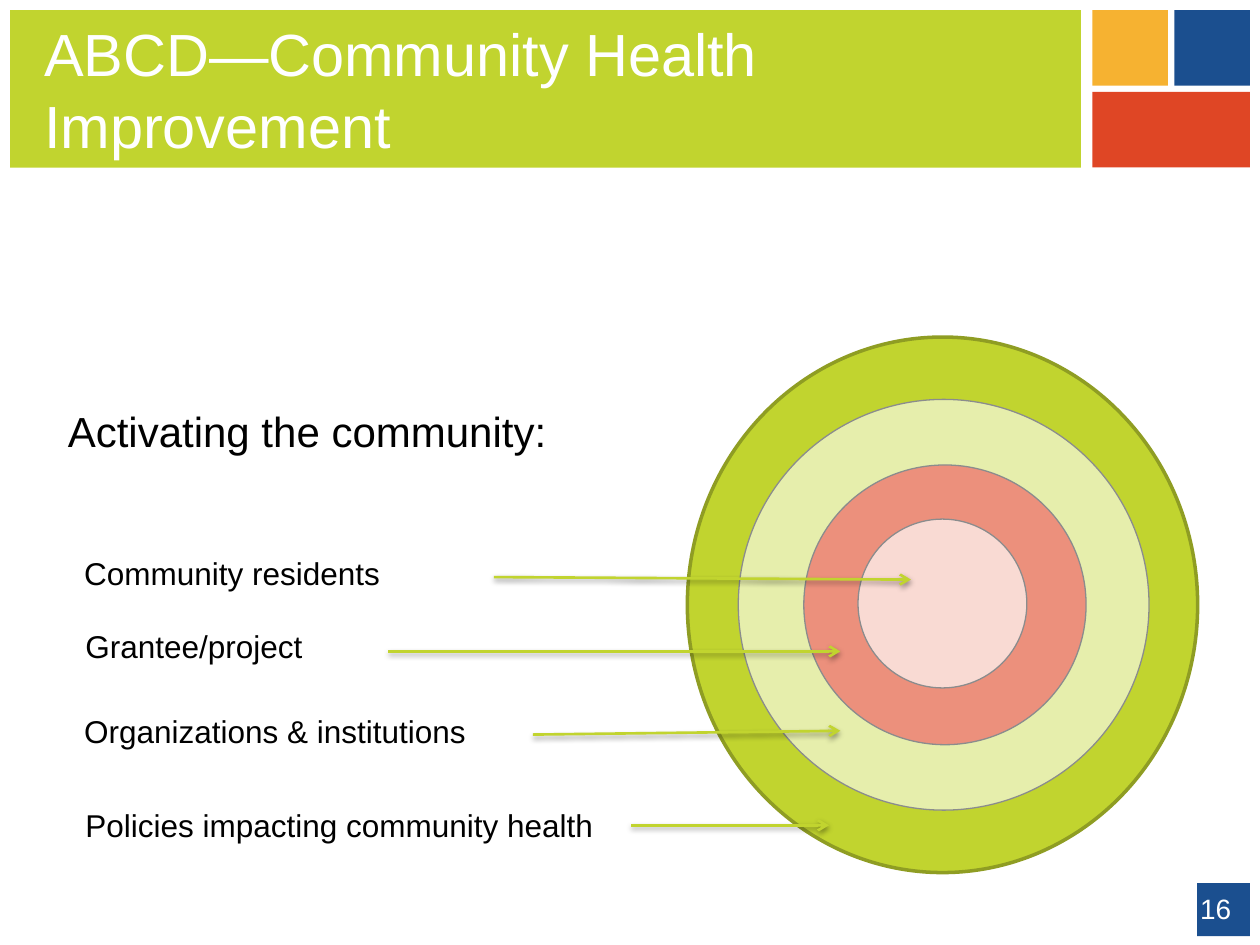
from lxml.etree import SubElement
from pptx import Presentation
from pptx.dml.color import RGBColor
from pptx.enum.shapes import MSO_CONNECTOR, MSO_SHAPE
from pptx.enum.text import MSO_ANCHOR, MSO_AUTO_SIZE, PP_ALIGN
from pptx.oxml.ns import qn
from pptx.util import Inches, Pt

FONT = "Arial"
LIME, BLUE, AMBER, RED = "C1D42F", "1B4F8F", "F6B231", "DF4625"
WHITE, BLACK, GREY = "FFFFFF", "000000", "8B8C8D"

# left, top, width, height, fill
BLOCKS = [
    (0.08, 0.08, 8.5, 1.25, LIME),
    (9.5, 7.01, 0.42, 0.42, BLUE),
    (8.67, 0.08, 0.6, 0.6, AMBER),
    (8.67, 0.73, 1.25, 0.6, RED),
    (9.32, 0.08, 0.6, 0.6, BLUE),
]
# centre x, centre y, width, height, fill, line colour, line width
RINGS = [
    (7.48, 4.8, 4.05, 4.25, LIME, "8F9D23", 2),
    (7.49, 4.8, 3.26, 3.26, "E6EEAC", GREY, 0.75),
    (7.5, 4.8, 2.24, 2.22, "EC907C", GREY, 0.75),
    (7.48, 4.79, 1.34, 1.34, "F9DAD3", GREY, 0.75),
]
# text, its left, top and width, then the arrow's start and end
LABELS = [
    ("Community residents", 0.57, 4.35, 2.57, (3.92, 4.58), (7.23, 4.6)),
    ("Grantee/project", 0.58, 4.93, 1.94, (3.08, 5.17), (6.67, 5.17)),
    ("Organizations & institutions", 0.57, 5.6, 3.35, (4.23, 5.83), (6.67, 5.8)),
    ("Policies impacting community health", 0.58, 6.35, 4.34, (5.01, 6.55), (6.58, 6.55)),
]


def rgb(color):
    return RGBColor.from_string(color)


def add_shape(s, kind, box, fill, line=None, width=0):
    sp = s.shapes.add_shape(kind, *map(Inches, box))
    sp.shadow.inherit = False
    sp.fill.solid()
    sp.fill.fore_color.rgb = rgb(fill)
    if line:
        sp.line.color.rgb = rgb(line)
        sp.line.width = Pt(width)
    else:
        sp.line.fill.background()


def add_ring(s, cx, cy, w, h, fill, line, width):
    add_shape(s, MSO_SHAPE.OVAL, (cx - w / 2, cy - h / 2, w, h), fill, line, width)


def format_text(p, size, color, align=PP_ALIGN.LEFT):
    p.alignment = align
    p.font.name = FONT
    p.font.size = Pt(size)
    p.font.color.rgb = rgb(color)


def set_title(s, text):
    title = s.shapes.title
    s.shapes._spTree.append(title._element)  # in front of the band
    title.left, title.top, title.width, title.height = map(Inches, (0.25, 0.08, 8.33, 1.25))
    tf = title.text_frame
    tf.text = text
    tf.word_wrap = True
    tf.auto_size = MSO_AUTO_SIZE.NONE
    tf.vertical_anchor = MSO_ANCHOR.MIDDLE
    p = tf.paragraphs[0]
    format_text(p, 34, WHITE)
    p.space_before, p.space_after = Pt(36), Pt(18)


def add_label(s, text, box, size):
    tf = s.shapes.add_textbox(*map(Inches, box)).text_frame
    tf.text = text
    tf.word_wrap = False
    tf.auto_size = MSO_AUTO_SIZE.SHAPE_TO_FIT_TEXT
    format_text(tf.paragraphs[0], size, BLACK)


def add_page_number(s, number):
    tf = s.shapes.add_textbox(*map(Inches, (7.54, 7.01, 2.33, 0.4))).text_frame
    tf.text = number
    tf.word_wrap = True
    tf.vertical_anchor = MSO_ANCHOR.MIDDLE
    format_text(tf.paragraphs[0], 16, WHITE, PP_ALIGN.RIGHT)


def add_arrow(s, start, end):
    """Draw a lime arrow with a soft shadow below it."""
    line = s.shapes.add_connector(MSO_CONNECTOR.STRAIGHT, *map(Inches, start + end))
    line.line.color.rgb = rgb(LIME)
    line.line.width = Pt(1.5)
    SubElement(line.line._get_or_add_ln(), qn("a:tailEnd"), type="arrow")
    effects = SubElement(line._element.spPr, qn("a:effectLst"))
    shadow = SubElement(effects, qn("a:outerShdw"), blurRad=str(Pt(3.1)),
                        dist=str(Pt(1.6)), dir="5400000", rotWithShape="0")
    color = SubElement(shadow, qn("a:srgbClr"), val=BLACK)
    SubElement(color, qn("a:alpha"), val="38000")


def main():
    prs = Presentation()
    prs.slide_width, prs.slide_height = Inches(10), Inches(7.5)
    s = prs.slides.add_slide(prs.slide_layouts[5])
    for *box, fill in BLOCKS:
        add_shape(s, MSO_SHAPE.RECTANGLE, box, fill)
    set_title(s, "ABCD—Community Health Improvement")
    add_page_number(s, "16")
    for ring in RINGS:
        add_ring(s, *ring)
    add_label(s, "Activating the community:", (0.44, 3.17, 4.16, 0.5), 24)
    for text, left, top, width, start, end in LABELS:
        add_label(s, text, (left, top, width, 0.4), 18)
        add_arrow(s, start, end)
    prs.save("out.pptx")


if __name__ == "__main__":
    main()
